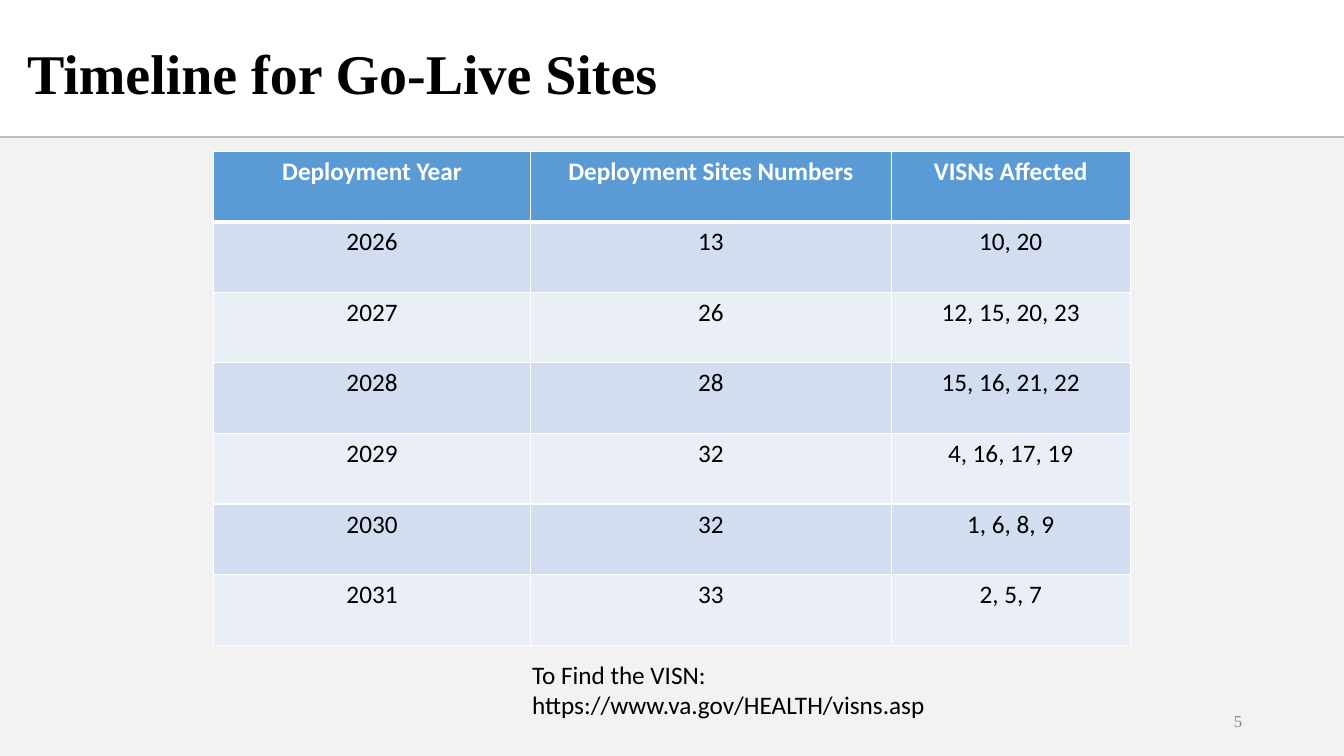
from dataclasses import dataclass

from lxml.etree import SubElement
from pptx import Presentation
from pptx.dml.color import RGBColor
from pptx.enum.shapes import MSO_CONNECTOR, MSO_SHAPE
from pptx.enum.text import MSO_ANCHOR, PP_ALIGN
from pptx.oxml.ns import qn
from pptx.slide import Slide
from pptx.table import _Cell
from pptx.util import Inches, Pt


@dataclass(frozen=True)
class Theme:
    heading_font: str = "Times New Roman"
    body_font: str = "Calibri"
    title_size: int = 40
    body_size: int = 18
    number_size: int = 12
    black: str = "000000"
    white: str = "FFFFFF"
    panel: str = "F2F2F2"
    rule: str = "BFBFBF"
    number: str = "8C8C8C"
    header: str = "5B9BD5"
    bands: tuple[str, str] = ("D2DEEF", "EAEFF7")


@dataclass(frozen=True)
class Label:
    text: str
    left: float
    top: float
    width: float
    height: float
    font: str
    size: int
    color: str
    bold: bool = False
    align: PP_ALIGN = PP_ALIGN.LEFT
    anchor: MSO_ANCHOR = MSO_ANCHOR.MIDDLE
    line_spacing: float = 1.0


@dataclass(frozen=True)
class Deployment:
    year: str
    sites: str
    visns: str


THEME = Theme()

LABELS = [
    Label("5", 9.42, 6.95, 3, 0.4, THEME.heading_font, THEME.number_size,
          THEME.number, align=PP_ALIGN.RIGHT),
    Label("Timeline for Go-Live Sites", 0.17, 0.25, 9.68, 1.02, THEME.heading_font,
          THEME.title_size, THEME.black, bold=True, line_spacing=0.9),
    Label("To Find the VISN:\vhttps://www.va.gov/HEALTH/visns.asp", 5.18, 6.49, 4.67, 0.71,
          THEME.body_font, THEME.body_size, THEME.black, anchor=MSO_ANCHOR.TOP),
]

HEADINGS = Deployment("Deployment Year", "Deployment Sites Numbers", "VISNs Affected")
DEPLOYMENTS = [
    Deployment("2026", "13", "10, 20"),
    Deployment("2027", "26", "12, 15, 20, 23"),
    Deployment("2028", "28", "15, 16, 21, 22"),
    Deployment("2029", "32", "4, 16, 17, 19"),
    Deployment("2030", "32", "1, 6, 8, 9"),
    Deployment("2031", "33", "2, 5, 7"),
]
COLUMN_WIDTHS = (3.14, 3.58, 2.37)
ROW_HEIGHT = 0.7


def rgb(color: str) -> RGBColor:
    return RGBColor.from_string(color)


def add_backdrop(slide: Slide) -> None:
    panel = slide.shapes.add_shape(
        MSO_SHAPE.RECTANGLE, 0, Inches(1.37), Inches(13.33), Inches(6.13))
    panel.shadow.inherit = False
    panel.fill.solid()
    panel.fill.fore_color.rgb = rgb(THEME.panel)
    panel.line.fill.background()

    rule = slide.shapes.add_connector(
        MSO_CONNECTOR.STRAIGHT, 0, Inches(1.36), Inches(13.33), Inches(1.36))
    rule.line.color.rgb = rgb(THEME.rule)
    rule.line.width = Pt(1.5)
    SubElement(rule._element.spPr, qn("a:effectLst"))


def add_label(slide: Slide, label: Label) -> None:
    box = slide.shapes.add_textbox(
        Inches(label.left), Inches(label.top), Inches(label.width), Inches(label.height))
    frame = box.text_frame
    frame.word_wrap = True
    frame.vertical_anchor = label.anchor
    frame.text = label.text
    paragraph = frame.paragraphs[0]
    paragraph.alignment = label.align
    paragraph.line_spacing = label.line_spacing
    for run in paragraph.runs:
        run.font.name = label.font
        run.font.size = Pt(label.size)
        run.font.bold = label.bold
        run.font.color.rgb = rgb(label.color)


def add_borders(cell: _Cell, top: int, bottom: int) -> None:
    properties = cell._tc.get_or_add_tcPr()
    for side, points in (("L", 1), ("R", 1), ("T", top), ("B", bottom)):
        border = SubElement(properties, qn(f"a:ln{side}"), w=str(Pt(points)))
        fill = SubElement(border, qn("a:solidFill"))
        SubElement(fill, qn("a:srgbClr"), val=THEME.white)


def fill_cell(cell: _Cell, text: str, row: int) -> None:
    is_header = row == 0
    add_borders(cell, top=3 if row == 1 else 1, bottom=3 if is_header else 1)
    cell.fill.solid()
    cell.fill.fore_color.rgb = rgb(THEME.header if is_header else THEME.bands[(row - 1) % 2])
    cell.text_frame.text = text
    paragraph = cell.text_frame.paragraphs[0]
    paragraph.alignment = PP_ALIGN.CENTER
    font = paragraph.runs[0].font
    font.name = THEME.body_font
    font.size = Pt(THEME.body_size)
    font.bold = is_header
    font.color.rgb = rgb(THEME.white if is_header else THEME.black)


def add_timeline(slide: Slide) -> None:
    entries = [HEADINGS, *DEPLOYMENTS]
    timeline = slide.shapes.add_table(
        len(entries), len(COLUMN_WIDTHS), Inches(2.12), Inches(1.5),
        Inches(sum(COLUMN_WIDTHS)), Inches(ROW_HEIGHT * len(entries))).table
    for column, width in zip(timeline.columns, COLUMN_WIDTHS):
        column.width = Inches(width)
    for row, entry in enumerate(entries):
        timeline.rows[row].height = Inches(ROW_HEIGHT)
        for column, text in enumerate((entry.year, entry.sites, entry.visns)):
            fill_cell(timeline.cell(row, column), text, row)


def main() -> None:
    deck = Presentation()
    deck.slide_width = Inches(13.33)
    deck.slide_height = Inches(7.5)
    slide = deck.slides.add_slide(deck.slide_layouts[6])
    add_backdrop(slide)
    for label in LABELS:
        add_label(slide, label)
    add_timeline(slide)
    deck.save("out.pptx")


if __name__ == "__main__":
    main()
